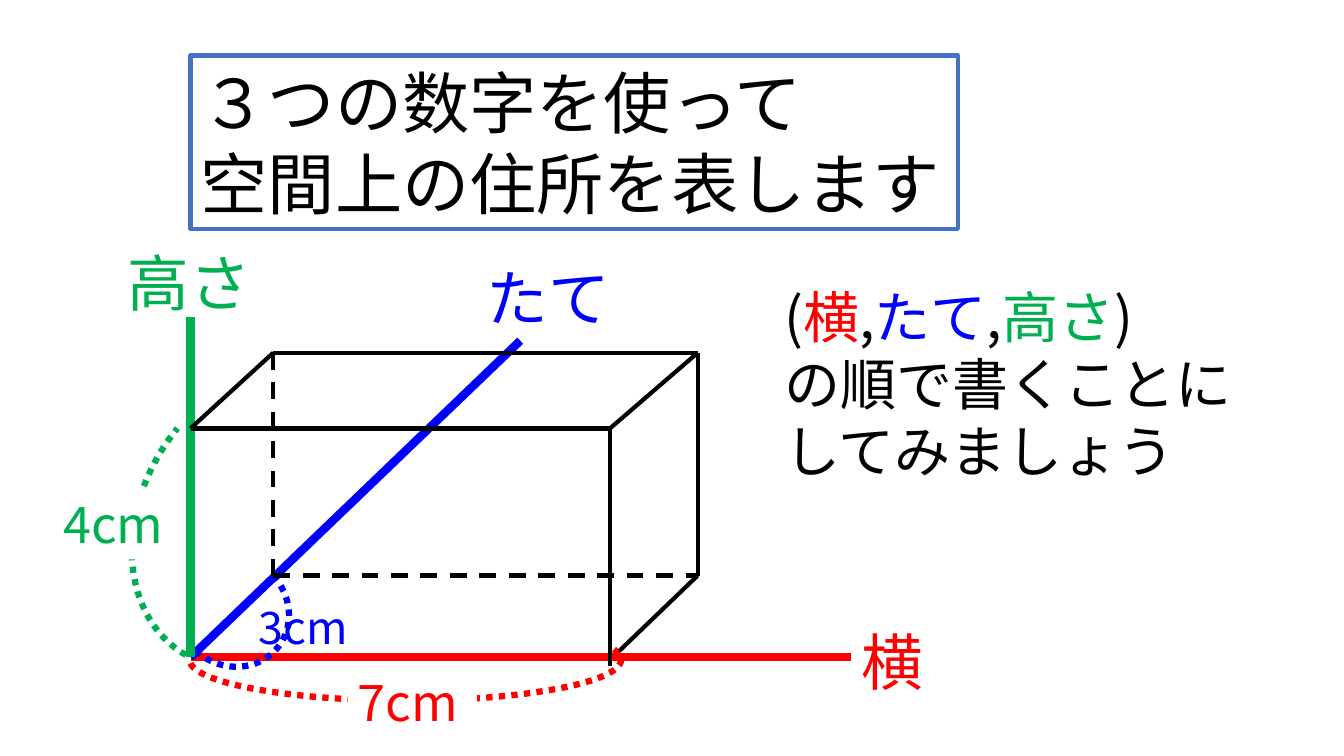
from lxml import etree
from pptx import Presentation
from pptx.dml.color import RGBColor
from pptx.enum.dml import MSO_LINE
from pptx.enum.shapes import MSO_CONNECTOR, MSO_SHAPE
from pptx.enum.text import MSO_ANCHOR, MSO_AUTO_SIZE, PP_ALIGN
from pptx.oxml.ns import qn
from pptx.util import Inches, Pt

STRAIGHT = MSO_CONNECTOR.STRAIGHT
ARC = MSO_SHAPE.ARC
DASH, DOTS = MSO_LINE.DASH, MSO_LINE.ROUND_DOT
LEFT, TOP = PP_ALIGN.LEFT, MSO_ANCHOR.TOP
MIDDLE = MSO_ANCHOR.MIDDLE
GROW = MSO_AUTO_SIZE.SHAPE_TO_FIT_TEXT

# Content: paragraphs are lists of (text, colour) spans
FONT = "Noto Sans CJK JP"
COLORS = {
    "ink": "000000", "paper": "FFFFFF", "frame": "4472C4",
    "width": "FF0000", "depth": "0000FF", "height": "00B050",
}
TITLE = [[("３つの数字を使って", "ink")], [("空間上の住所を表します", "ink")]]
ORDER_RULE = [
    [("(", "ink"), ("横", "width"), (",", "ink"), ("たて", "depth"),
     (",", "ink"), ("高さ", "height"), (")", "ink")],
    [("の順で書くことに", "ink")],
    [("してみましょう", "ink")],
]

# Geometry in inches; the axes meet at the front lower left corner
TITLE_BOX = (1.89, 0.55, 7.61, 1.72)
RULE_BOX = (7.68, 2.75, 4.69, 2.12)
ORIGIN = (1.89, 6.52)
FRONT_RIGHT, FRONT_TOP = 6.05, 4.25
BACK_LEFT, BACK_RIGHT, BACK_TOP, BACK_FLOOR = 2.71, 6.92, 3.5, 5.71

AXES = [  # colour, tip, name, name box
    ("width", (8.44, 6.52), "横", (8.45, 6.14, 0.82, 0.84)),
    ("depth", (5.16, 3.38), "たて", (4.73, 2.53, 1.44, 0.84)),
    ("height", (1.89, 3.15), "高さ", (1.17, 2.38, 1.44, 0.84)),
]
MEASURES = [  # colour, arc box, rotation, arc ends, label, label box, size, fill
    ("width", (1.88, 6.14, 4.28, 0.81), 180, (106.29, 0),
     "7cm", (3.45, 6.61, 1.28, 0.71), 36, "paper"),
    ("height", (1.42, 3.51, 2.51, 3.22), 212.8, (160.95, 6.44),
     "4cm", (0.53, 4.84, 1.28, 0.71), 36, "paper"),
    ("depth", (1.77, 5.49, 1.07, 1.15), 127.2, (114.94, 0),
     "3cm", (2.47, 5.9, 1.16, 0.64), 32, None),
]
CORNERS = {
    "front top left": (ORIGIN[0], FRONT_TOP),
    "front top right": (FRONT_RIGHT, FRONT_TOP),
    "front floor right": (FRONT_RIGHT, 6.61),
    "back top left": (BACK_LEFT, BACK_TOP),
    "back top right": (BACK_RIGHT, BACK_TOP),
    "back floor left": (BACK_LEFT, BACK_FLOOR),
    "back floor right": (BACK_RIGHT, BACK_FLOOR),
    "side floor front": (6.14, 6.46),
}
EDGES = [  # from, to, dash
    ("back top right", "front top right", None),
    ("front top left", "front top right", None),
    ("back top left", "back top right", None),
    ("back top left", "front top left", None),
    ("back floor right", "side floor front", None),
    ("front top right", "front floor right", None),
    ("back top right", "back floor right", None),
    ("back floor left", "back floor right", DASH),
    ("back top left", "back floor left", DASH),
]


def color(name):
    return RGBColor.from_string(COLORS[name])


def inches(lengths):
    return [Inches(length) for length in lengths]


def style_line(line, name, width, dash=None):
    line.color.rgb = color(name)
    line.width = Pt(width)
    if dash is not None:
        line.dash_style = dash


def draw_line(page, start, end, name, width, dash=None):
    line = page.shapes.add_connector(STRAIGHT, *inches(start + end))
    style_line(line.line, name, width, dash)
    etree.SubElement(line._element.spPr, qn("a:effectLst"))


def write(box, paragraphs, size, anchor=TOP):
    frame = box.text_frame
    frame.word_wrap = False
    frame.auto_size = GROW
    frame.vertical_anchor = anchor
    for index, spans in enumerate(paragraphs):
        para = frame.add_paragraph() if index else frame.paragraphs[0]
        para.alignment = LEFT
        para.font.size = Pt(size)
        para.font.name = FONT
        # East Asian text takes its own typeface entry
        defaults = para._p.pPr.find(qn("a:defRPr"))
        etree.SubElement(defaults, qn("a:ea"), typeface=FONT)
        for text, name in spans:
            span = para.add_run()
            span.text = text
            span.font.color.rgb = color(name)


def add_text(page, place, paragraphs, size, fill=None):
    box = page.shapes.add_textbox(*inches(place))
    if fill:
        box.fill.solid()
        box.fill.fore_color.rgb = color(fill)
    write(box, paragraphs, size)


def add_arc(page, place, rotation, ends, name):
    arc = page.shapes.add_shape(ARC, *inches(place))
    arc.shadow.inherit = False
    arc.fill.background()
    arc.rotation = rotation
    for index, end in enumerate(ends):
        arc.adjustments[index] = end
    style_line(arc.line, name, 4.5, DOTS)


def main():
    deck = Presentation()
    deck.slide_width, deck.slide_height = Inches(13.33), Inches(7.5)
    page = deck.slides.add_slide(deck.slide_layouts.get_by_name("Title Only"))

    # Framed title
    title = page.shapes.title
    title.left, title.top, title.width, title.height = inches(TITLE_BOX)
    style_line(title.line, "frame", 3)
    write(title, TITLE, 48, MIDDLE)

    # Axes and their names
    for name, tip, label, place in AXES:
        draw_line(page, ORIGIN, tip, name, 6)
        add_text(page, place, [[(label, name)]], 44)

    # Dotted measures
    for name, place, rotation, ends, label, label_place, size, fill in MEASURES:
        add_arc(page, place, rotation, ends, name)
        add_text(page, label_place, [[(label, name)]], size, fill)

    # Order of the three numbers
    add_text(page, RULE_BOX, ORDER_RULE, 40)

    # Cuboid
    for start, end, dash in EDGES:
        draw_line(page, CORNERS[start], CORNERS[end], "ink", 3, dash)

    deck.save("out.pptx")


if __name__ == "__main__":
    main()
